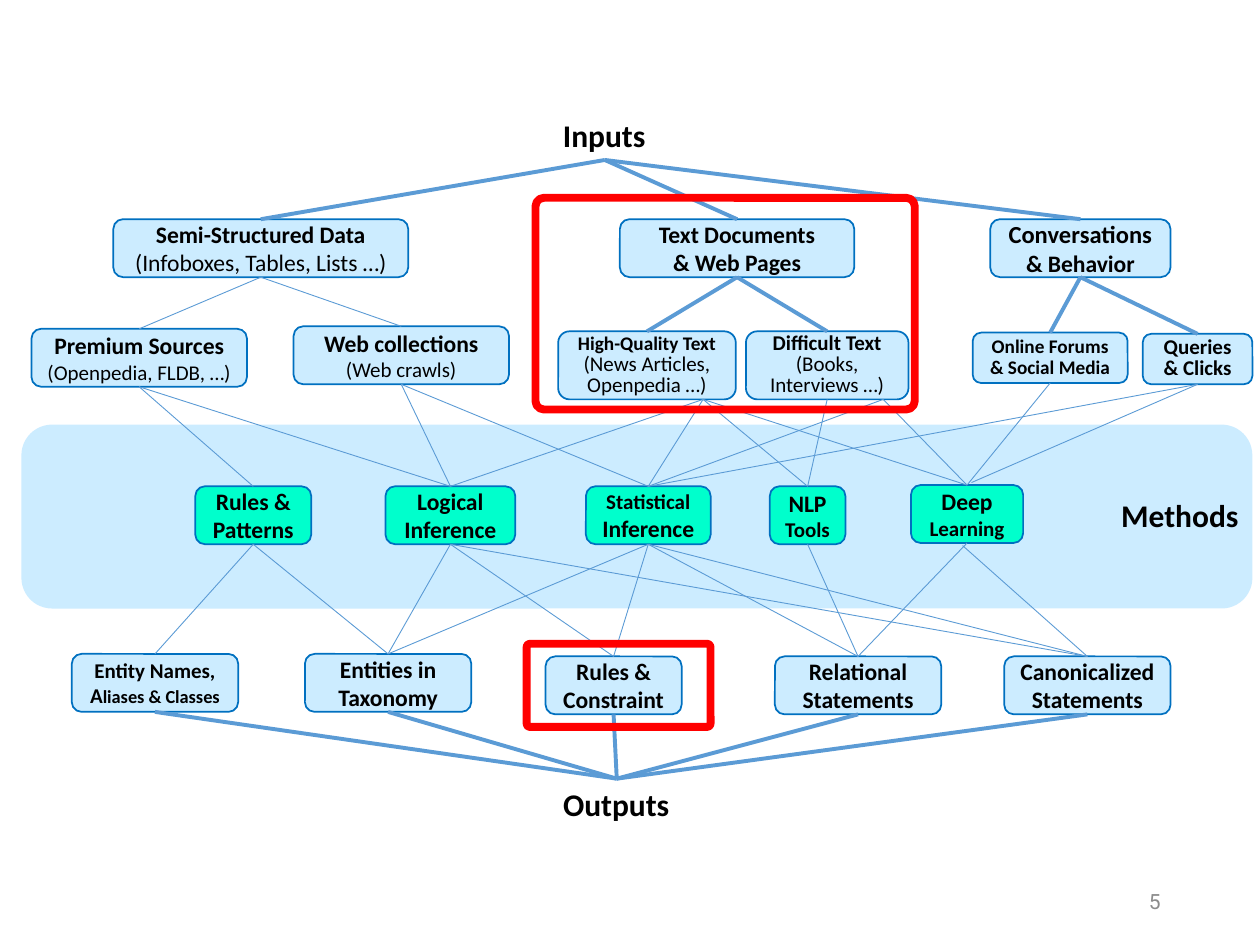
from lxml import etree
from pptx import Presentation
from pptx.dml.color import RGBColor
from pptx.enum.shapes import MSO_CONNECTOR, MSO_SHAPE
from pptx.enum.text import MSO_ANCHOR as Anchor, PP_ALIGN as Align
from pptx.oxml.ns import qn
from pptx.util import Inches, Pt

PALE, MINT = "CCECFF", "00FFCC"
BORDER, LINK, HIGHLIGHT = "0070C0", "5B9BD5", "FF0000"
THICK, THIN = 2.25, 0.5
BOTTOM, TOP = 2, 0


def add_text(paragraph, text, size, bold=True, name="Calibri", color="000000"):
    run = paragraph.add_run()
    run.text = text
    for attribute, value in {"name": name, "size": Pt(size), "bold": bold}.items():
        setattr(run.font, attribute, value)
    run.font.color.rgb = RGBColor.from_string(color)


def add_round_box(place, fill=None, border=None, width=1):
    box = slide.shapes.add_shape(MSO_SHAPE.ROUNDED_RECTANGLE, *map(Inches, place))
    box.shadow.inherit = False
    if fill:
        box.fill.solid()
        box.fill.fore_color.rgb = RGBColor.from_string(fill)
    else:
        box.fill.background()
    if border:
        box.line.color.rgb = RGBColor.from_string(border)
        box.line.width = Pt(width)
    else:
        box.line.fill.background()
    return box


deck = Presentation()
deck.slide_width, deck.slide_height = Inches(10), Inches(7.5)
slide = deck.slides.add_slide(deck.slide_layouts[6])

add_round_box((0.17, 3.37, 9.77, 1.46), PALE)

nodes = {}
for heading, left, top, width in [
    ("Inputs", 4.37, 0.87, 0.86),
    ("Outputs", 4.37, 6.18, 1.05),
    ("Methods", 8.8, 3.89, 1.14),
]:
    nodes[heading] = slide.shapes.add_textbox(*map(Inches, (left, top, width, 0.4)))
    nodes[heading].text_frame.word_wrap = False
    add_text(nodes[heading].text_frame.paragraphs[0], heading, 18)

# Each row: height, fill, exact line spacing, then key, left, top, width and
# the paragraphs as (text, size[, bold]).
rows = [
    (0.46, PALE, None, [
        ("semi", 0.9, 1.74, 2.34, [("Semi-Structured Data", 13.5),
                                   ("(Infoboxes, Tables, Lists …)", 13.5, False)]),
        ("documents", 4.92, 1.74, 1.86, [("Text Documents", 13.5), ("& Web Pages", 13.5)]),
        ("behavior", 7.86, 1.74, 1.43, [("Conversations", 14), ("& Behavior", 13.5)]),
        ("premium", 0.25, 2.61, 1.71, [("Premium Sources", 13.5),
                                       ("(Openpedia, FLDB, …)", 12, False)]),
        ("web", 2.33, 2.59, 1.71, [("Web collections", 13.5), ("(Web crawls)", 12, False)]),
    ]),
    (0.54, PALE, 12, [
        ("quality", 4.43, 2.63, 1.41, [("High-Quality Text", 11),
                                       ("(News Articles, Openpedia …)", 12, False)]),
        ("difficult", 5.92, 2.63, 1.29, [("Difficult Text", 12), ("(Books,", 12, False),
                                         ("Interviews …)", 12, False)]),
    ]),
    (0.4, PALE, 12, [
        ("forums", 7.72, 2.64, 1.23, [("Online Forums", 11), ("& Social Media", 11)]),
        ("queries", 9.07, 2.65, 0.87, [("Queries & Clicks", 12)]),
    ]),
    (0.46, MINT, None, [
        ("patterns", 1.55, 3.86, 0.92, [("Rules & Patterns", 13.5)]),
        ("logical", 3.06, 3.86, 1.03, [("Logical", 13.5), ("Inference", 13.5)]),
        ("statistical", 4.65, 3.86, 0.99, [("Statistical", 12), ("Inference", 13.5)]),
        ("nlp", 6.11, 3.86, 0.6, [("NLP", 13.5), ("Tools", 12)]),
        ("deep", 7.23, 3.85, 0.89, [("Deep", 13.5), ("Learning", 12)]),
    ]),
    (0.46, PALE, None, [
        ("names", 0.57, 5.19, 1.32, [("Entity Names, A", 12)]),
        ("taxonomy", 2.42, 5.19, 1.32, [("Entities in", 13.5), ("Taxonomy", 13.5)]),
        ("constraint", 4.33, 5.21, 1.08, [("Rules &", 13.5), ("Constraint", 13.5)]),
        ("relational", 6.15, 5.21, 1.32, [("Relational", 13.5), ("Statements", 13.5)]),
        ("canonical", 7.97, 5.21, 1.32, [("Canonicalized", 13.5), ("Statements", 13.5)]),
    ]),
]
frame_format = {
    "word_wrap": True, "vertical_anchor": Anchor.MIDDLE,
    "margin_left": Inches(0.08), "margin_right": Inches(0.08),
    "margin_top": Inches(0.04), "margin_bottom": Inches(0.04),
}
for height, fill, spacing, boxes in rows:
    for key, left, top, width, paragraphs in boxes:
        nodes[key] = add_round_box((left, top, width, height), fill, BORDER)
        frame = nodes[key].text_frame
        for attribute, value in frame_format.items():
            setattr(frame, attribute, value)
        for index, content in enumerate(paragraphs):
            paragraph = frame.paragraphs[0] if index == 0 else frame.add_paragraph()
            paragraph.alignment = Align.CENTER
            if spacing:
                paragraph.line_spacing = Pt(spacing)
            add_text(paragraph, *content)
add_text(nodes["names"].text_frame.paragraphs[0], "liases & Classes", 10.5)

# Links run from a bottom side to a top side; a pair of numbers is a free point.
quality_edge, difficult_edge = (5.58, 3.17), (7.01, 3.17)
links = [
    (THICK, "Inputs", ["semi", "documents", "behavior"]),
    (THICK, "behavior", ["forums", "queries"]),
    (THICK, "documents", ["quality", "difficult"]),
    (THIN, "semi", ["premium", "web"]),
    (THIN, "premium", ["patterns", "logical"]),
    (THIN, "web", ["logical", "statistical"]),
    (THIN, quality_edge, ["logical", "statistical", "nlp", "deep"]),
    (THIN, "difficult", ["nlp"]),
    (THIN, difficult_edge, ["statistical", "deep"]),
    (THIN, "forums", ["deep"]),
    (THIN, "queries", ["statistical", (7.71, 3.83)]),
    (THIN, "patterns", ["names", "taxonomy"]),
    (THIN, "logical", ["taxonomy", "constraint", "canonical"]),
    (THIN, "statistical", ["taxonomy", "constraint", "relational", "canonical"]),
    (THIN, "nlp", ["relational"]),
    (THIN, "deep", ["relational"]),
    (THIN, (7.64, 4.33), ["canonical"]),
]
links += [(THICK, result, ["Outputs"])
          for result in ("names", "taxonomy", "constraint", "relational", "canonical")]
for weight, source, targets in links:
    for target in targets:
        start = source if isinstance(source, tuple) else (0, 0)
        end = target if isinstance(target, tuple) else (0, 0)
        link = slide.shapes.add_connector(MSO_CONNECTOR.STRAIGHT, *map(Inches, start + end))
        if source in nodes:
            link.begin_connect(nodes[source], BOTTOM)
        if target in nodes:
            link.end_connect(nodes[target], TOP)
        link.line.color.rgb = RGBColor.from_string(LINK)
        link.line.width = Pt(weight)
        etree.SubElement(link._element.spPr, qn("a:effectLst"))

page_number = slide.shapes.add_textbox(*map(Inches, (7.06, 6.95, 2.25, 0.4))).text_frame
page_number.word_wrap = True
page_number.vertical_anchor = Anchor.MIDDLE
page_number.paragraphs[0].alignment = Align.RIGHT
add_text(page_number.paragraphs[0], "5", 12, False, "Roboto", "8C8C8C")

for place in [(4.25, 1.57, 3.01, 1.68), (4.18, 5.11, 1.46, 0.66)]:
    add_round_box(place, border=HIGHLIGHT, width=4.5).adjustments[0] = 0.04

deck.save("out.pptx")
